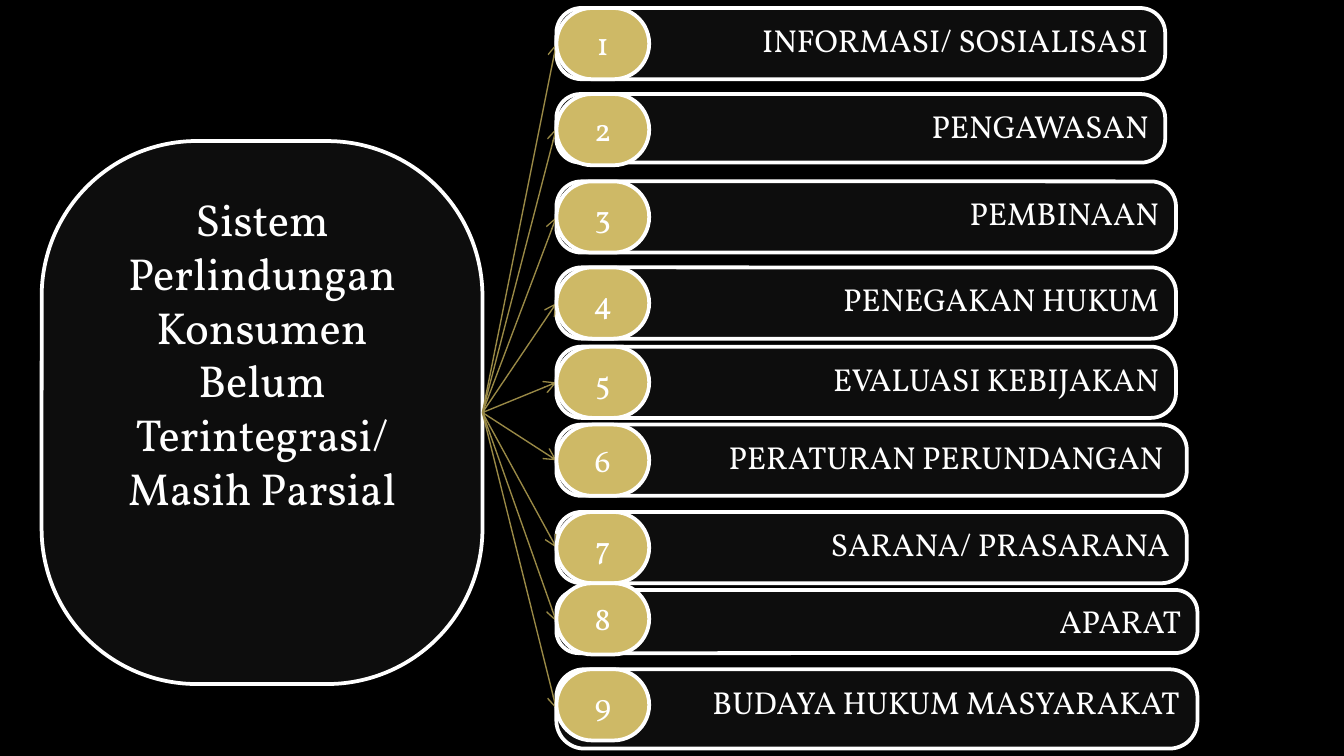
from pptx import Presentation
from pptx.dml.color import RGBColor
from pptx.enum.shapes import MSO_CONNECTOR, MSO_SHAPE
from pptx.enum.text import MSO_ANCHOR, PP_ALIGN
from pptx.oxml.ns import qn
from pptx.util import Inches, Pt
from lxml import etree

ROUNDED = MSO_SHAPE.ROUNDED_RECTANGLE
STRAIGHT = MSO_CONNECTOR.STRAIGHT
TOP = MSO_ANCHOR.TOP
CENTER, RIGHT = PP_ALIGN.CENTER, PP_ALIGN.RIGHT

BLACK = RGBColor(0x00, 0x00, 0x00)
PANEL = RGBColor(0x0D, 0x0D, 0x0D)
WHITE = RGBColor(0xFF, 0xFF, 0xFF)
GOLD = RGBColor(0xCE, 0xB9, 0x66)
DARK_GOLD = RGBColor(0x99, 0x89, 0x46)
FONT = "Vollkorn"

PROBLEM = "Sistem Perlindungan Konsumen Belum Terintegrasi/ Masih Parsial"
# Label, bar top, bar width, bar height, badge top
FACTORS = [
    ("INFORMASI/ SOSIALISASI", 0.06, 4.53, 0.53, 0.06),
    ("PENGAWASAN", 0.70, 4.53, 0.51, 0.70),
    ("PEMBINAAN", 1.35, 4.61, 0.53, 1.35),
    ("PENEGAKAN HUKUM", 1.99, 4.61, 0.53, 1.99),
    ("EVALUASI KEBIJAKAN", 2.58, 4.61, 0.53, 2.58),
    ("PERATURAN PERUNDANGAN ", 3.16, 4.69, 0.53, 3.16),
    ("SARANA/ PRASARANA", 3.81, 4.69, 0.53, 3.81),
    ("APARAT", 4.39, 4.77, 0.47, 4.34),
    ("BUDAYA HUKUM MASYARAKAT", 4.98, 4.77, 0.59, 4.98),
]

PAGE_WIDTH = 10
PAGE_HEIGHT = PAGE_WIDTH * 9 / 16
PROBLEM_LEFT, PROBLEM_TOP, PROBLEM_WIDTH, PROBLEM_HEIGHT = 0.31, 1.05, 3.28, 4.04
BAR_LEFT = 4.14
BADGE_WIDTH, BADGE_HEIGHT = 0.69, 0.53
PANEL_ROUNDING, BADGE_ROUNDING = 0.352, 0.5


def add_rounded_box(page, text, left, top, width, height, fill, rounding, size, align):
    box = page.shapes.add_shape(
        ROUNDED, Inches(left), Inches(top), Inches(width), Inches(height))
    box.adjustments[0] = rounding
    box.shadow.inherit = False
    box.fill.solid()
    box.fill.fore_color.rgb = fill
    box.line.color.rgb = WHITE
    box.line.width = Pt(2)
    frame = box.text_frame
    frame.word_wrap = True
    frame.vertical_anchor = TOP
    frame.margin_left = frame.margin_right = Inches(0.07)
    frame.margin_top = frame.margin_bottom = Inches(0.04)
    para = frame.paragraphs[0]
    para.text = text
    para.alignment = align
    para.font.name = FONT
    para.font.size = Pt(size)
    para.font.color.rgb = WHITE


def add_arrow(page, start, end):
    arrow = page.shapes.add_connector(
        STRAIGHT, *(Inches(value) for value in (*start, *end)))
    arrow.line.color.rgb = DARK_GOLD
    arrow.line.width = Pt(0.75)
    properties = arrow.element.spPr
    etree.SubElement(properties.find(qn("a:ln")), qn("a:tailEnd"), type="arrow")
    etree.SubElement(properties, qn("a:effectLst"))


def main():
    deck = Presentation()
    deck.slide_width, deck.slide_height = Inches(PAGE_WIDTH), Inches(PAGE_HEIGHT)
    page = deck.slides.add_slide(deck.slide_layouts[6])
    page.background.fill.solid()
    page.background.fill.fore_color.rgb = BLACK

    add_rounded_box(page, PROBLEM, PROBLEM_LEFT, PROBLEM_TOP, PROBLEM_WIDTH,
                    PROBLEM_HEIGHT, PANEL, PANEL_ROUNDING, 24, CENTER)
    hub = (PROBLEM_LEFT + PROBLEM_WIDTH, PROBLEM_TOP + PROBLEM_HEIGHT / 2)

    for label, top, width, height, _ in FACTORS:
        add_rounded_box(page, label, BAR_LEFT, top, width, height,
                        PANEL, PANEL_ROUNDING, 17, RIGHT)
        add_arrow(page, hub, (BAR_LEFT, top + height / 2))

    for number, (*_, badge_top) in enumerate(FACTORS, start=1):
        add_rounded_box(page, str(number), BAR_LEFT, badge_top, BADGE_WIDTH,
                        BADGE_HEIGHT, GOLD, BADGE_ROUNDING, 17, CENTER)

    deck.save("out.pptx")


if __name__ == "__main__":
    main()
